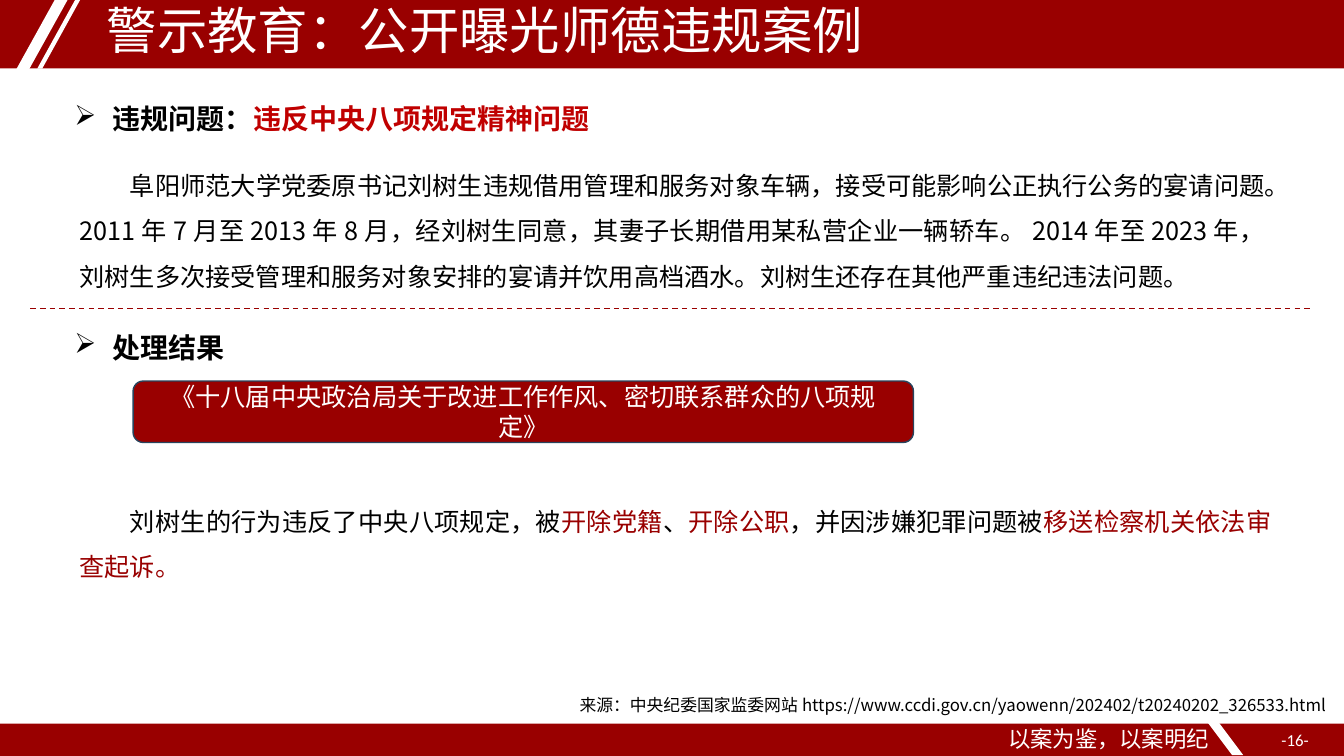
from lxml import etree
from pptx import Presentation, util as u
from pptx.dml.color import RGBColor
from pptx.enum import dml, shapes, text
from pptx.oxml import ns

RED, BRIGHT_RED, WHITE, BLACK = "990000", "C00000", "FFFFFF", "000000"
CJK = "Noto Sans CJK SC"
W, H = 13.33, 7.5

deck = Presentation()
deck.slide_width, deck.slide_height = u.Inches(W), u.Inches(H)
slide = deck.slides.add_slide(deck.slide_layouts[6])


def block(kind, area, fill):
    """Add a plain filled shape without outline or shadow."""
    shape = slide.shapes.add_shape(kind, *map(u.Inches, area))
    shape.shadow.inherit = False
    shape.fill.solid()
    shape.fill.fore_color.rgb = RGBColor.from_string(fill)
    shape.line.fill.background()
    return shape


def write(frame, runs, size, align="LEFT", anchor="TOP", font=CJK, bold=False, spacing=None,
          indent=0, bullet=None):
    """Fill a text frame with one paragraph of (wording, colour) runs."""
    frame.word_wrap = True
    frame.vertical_anchor = getattr(text.MSO_ANCHOR, anchor)
    paragraph = frame.paragraphs[0]
    paragraph.alignment = getattr(text.PP_ALIGN, align)
    paragraph.line_spacing = spacing
    props = paragraph._p.get_or_add_pPr()
    props.set("indent", str(u.Inches(indent)))
    if bullet:
        props.set("marL", str(u.Inches(-indent)))
        etree.SubElement(props, ns.qn("a:buChar"), char=bullet)
    for wording, colour in runs:
        run = paragraph.add_run()
        run.text = wording
        run.font.size, run.font.name, run.font.bold = u.Pt(size), font, bold
        run.font.color.rgb = RGBColor.from_string(colour)
        etree.SubElement(run._r.get_or_add_rPr(), ns.qn("a:ea"), typeface=font)


# Header and footer bands with slanted cuts
block(shapes.MSO_SHAPE.RECTANGLE, (0, 0, W, 0.68), RED)
block(shapes.MSO_SHAPE.RECTANGLE, (0, H - 0.32, W, 0.32), RED)
for area, slant, mirrored in [
    ((11.98, 7.17, 0.35, 0.32), 0.75, True),
    ((0.16, 0, 0.51, 0.69), 0.75, False),
    ((0.37, -0.01, 0.43, 0.69), 0.885, False),
]:
    cut = block(shapes.MSO_SHAPE.PARALLELOGRAM, area, WHITE)
    cut.adjustments[0] = slant
    if mirrored:
        cut._element.spPr.get_or_add_xfrm().set("flipH", "1")

divider = slide.shapes.add_connector(
    shapes.MSO_CONNECTOR.STRAIGHT, *map(u.Inches, (0.3, 3.06, W - 0.3, 3.06)))
divider.line.color.rgb = RGBColor.from_string(RED)
divider.line.width = u.Pt(1)
divider.line.dash_style = dml.MSO_LINE.DASH
etree.SubElement(divider._element.spPr, ns.qn("a:effectLst"))

heading = dict(size=20, bold=True, indent=-0.38, bullet="➢")
body = dict(size=18, align="JUSTIFY", spacing=1.5, indent=0.5)
for area, runs, style in [
    ((0.96, 0.03, 10.07, 0.59), [("警示教育：公开曝光师德违规案例", WHITE)],
     dict(size=36, anchor="MIDDLE", spacing=0.9)),
    ((0.64, 0.96, 9.53, 0.44),
     [("违规问题：", BLACK), ("违反中央八项规定精神问题", BRIGHT_RED)], heading),
    ((0.69, 1.49, 11.95, 1.46),
     [("阜阳师范大学党委原书记刘树生违规借用管理和服务对象车辆，接受可能影响公正执行公务的宴请问题。"
       "2011年7月至2013年8月，经刘树生同意，其妻子长期借用某私营企业一辆轿车。"
       "2014年至2023年，刘树生多次接受管理和服务对象安排的宴请并饮用高档酒水。"
       "刘树生还存在其他严重违纪违法问题。", BLACK)], body),
    ((0.64, 3.23, 4.48, 0.44), [("处理结果", BLACK)], heading),
    ((0.69, 4.82, 12.02, 1.01),
     [("刘树生的行为违反了中央八项规定，被", BLACK), ("开除党籍", RED), ("、", BLACK),
      ("开除公职", RED), ("，并因涉嫌犯罪问题被", BLACK),
      ("移送检察机关依法审查起诉。", RED)], body),
    ((5.65, 6.84, 7.68, 0.3),
     [("来源：中央纪委国家监委网站"
       "https://www.ccdi.gov.cn/yaowenn/202402/t20240202_326533.html", BLACK)], dict(size=12)),
    ((9.9, 7.14, 2.86, 0.36), [("以案为鉴，以案明纪", WHITE)], dict(size=16)),
    ((12.49, 7.19, 0.71, 0.31), [("-16-", WHITE)],
     dict(size=12, align="CENTER", font="Calibri")),
]:
    write(slide.shapes.add_textbox(*map(u.Inches, area)).text_frame, runs, **style)

regulation = block(shapes.MSO_SHAPE.ROUNDED_RECTANGLE, (1.32, 3.78, 7.74, 0.61), RED)
regulation.line.color.rgb = RGBColor.from_string("28445D")
regulation.line.width = u.Pt(1)
write(regulation.text_frame,
      [("《十八届中央政治局关于改进工作作风、密切联系群众的八项规定》", WHITE)],
      18, align="CENTER", anchor="MIDDLE")

deck.save("out.pptx")
